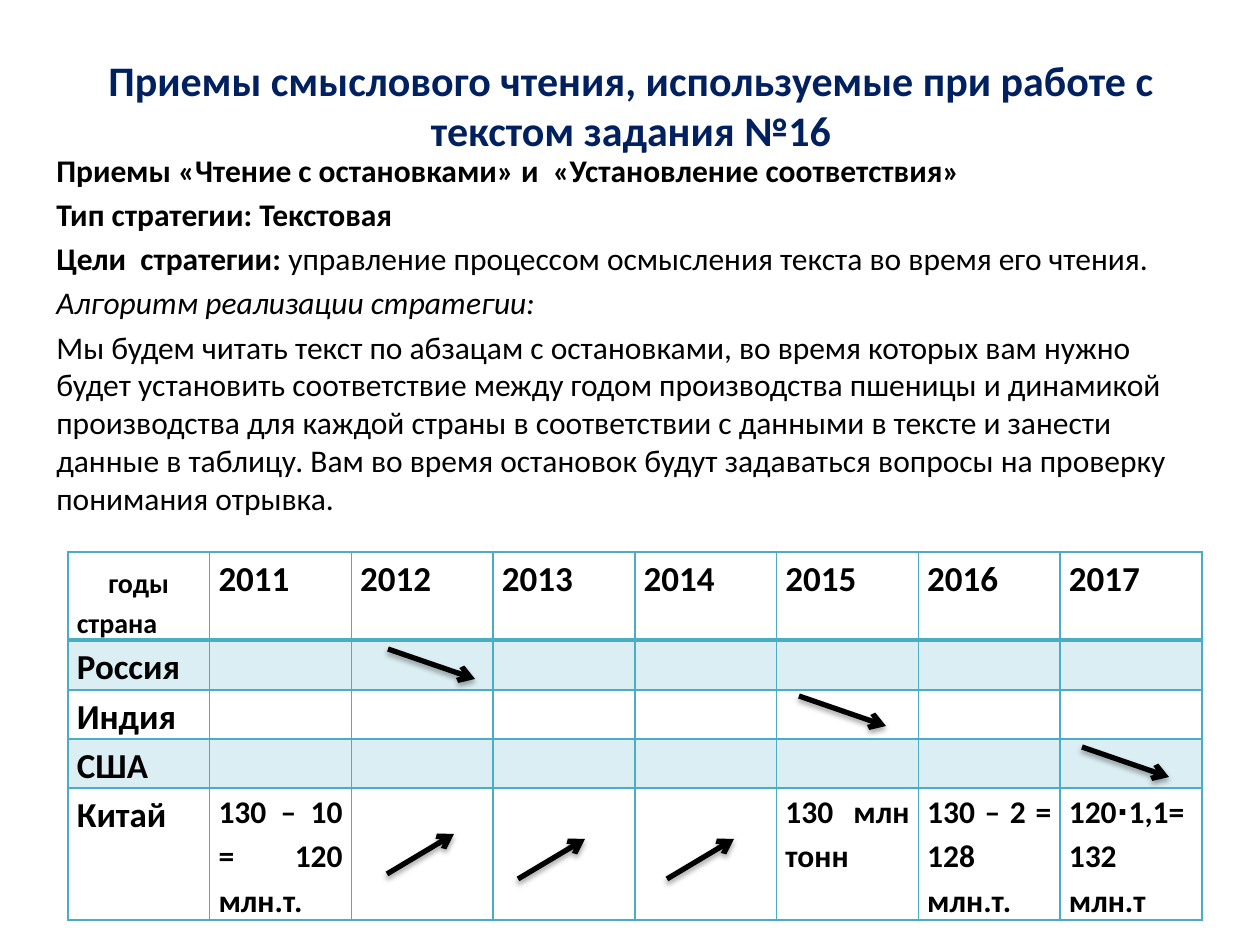
from dataclasses import dataclass

from lxml import etree
from pptx import Presentation
from pptx import util as u
from pptx.dml.color import RGBColor
from pptx.enum import shapes, text
from pptx.oxml import parse_xml
from pptx.oxml.ns import nsdecls, qn

PX = u.Inches(1) / 126


@dataclass(frozen=True)
class Theme:
    font: str = "Calibri"
    navy: str = "002060"
    black: str = "000000"
    teal: str = "4BACC6"
    title: int = 24
    body: int = 18
    label: int = 20
    corner: int = 16


THEME = Theme()

STRATEGY = [
    [("Приемы «Чтение с остановками» и  «Установление соответствия»", "b")],
    [("Тип стратегии: Текстовая", "b")],
    [("Цели  стратегии:", "b"),
     (" управление процессом осмысления текста во время его чтения.", "")],
    [("Алгоритм реализации стратегии:", "i")],
    [("Мы будем читать текст по абзацам с остановками, во время которых вам нужно "
      "будет установить соответствие между годом производства пшеницы и динамикой "
      "производства для каждой страны в соответствии с данными в тексте и занести "
      "данные в таблицу. Вам во время остановок будут задаваться вопросы на проверку "
      "понимания отрывка.", "")],
]

YEARS = [str(year) for year in range(2011, 2018)]
COUNTRIES = ["Россия", "Индия", "США", "Китай"]
CHINA = {
    "2011": "130 – 10 = 120 млн.т.",
    "2015": "130 млн тонн",
    "2016": "130 – 2 = 128 млн.т.",
    "2017": "120∙1,1=132 млн.т",
}
ROW_HEIGHTS = [88, 50, 49, 49, 132]
RISE, FALL = (67, -40), (87, 30)
TRENDS = [
    (319, 322, RISE), (450, 327, RISE), (599, 327, RISE),
    (320, 97, FALL), (731, 144, FALL), (1014, 195, FALL),
]


def px(value):
    return u.Emu(round(value * PX))


def style(font, size, color=THEME.black, bold=False, italic=False):
    font.name = THEME.font
    font.size = u.Pt(size)
    font.color.rgb = RGBColor.from_string(color)
    font.bold = bold
    font.italic = italic


def place_title(slide, box):
    heading = slide.shapes.title
    heading.left, heading.top, heading.width, heading.height = map(px, box)
    frame = heading.text_frame
    frame.text = "Приемы смыслового чтения, используемые при работе с текстом задания №16"
    frame.vertical_anchor = text.MSO_ANCHOR.MIDDLE
    frame.paragraphs[0].alignment = text.PP_ALIGN.CENTER
    style(frame.paragraphs[0].runs[0].font, THEME.title, THEME.navy, bold=True)


def place_strategy(slide, box):
    frame = slide.shapes.add_textbox(*map(px, box)).text_frame
    frame.word_wrap = True
    for index, pieces in enumerate(STRATEGY):
        paragraph = frame.add_paragraph() if index else frame.paragraphs[0]
        if index:
            paragraph.space_before = u.Pt(THEME.body * 0.2)
        for wording, look in pieces:
            run = paragraph.add_run()
            run.text = wording
            style(run.font, THEME.body, bold=look == "b", italic=look == "i")


def write_cell(cell, wording, size):
    cell.margin_left = cell.margin_right = u.Inches(0.07)
    cell.margin_top = cell.margin_bottom = 0
    cell.text_frame.text = wording
    for paragraph in cell.text_frame.paragraphs:
        paragraph.alignment = text.PP_ALIGN.JUSTIFY
        paragraph.line_spacing = 1.15
        style(paragraph.font, size, bold=True)
        for run in paragraph.runs:
            style(run.font, size, bold=True)


def paint_cell(cell, banded, top, bottom):
    properties = cell._tc.get_or_add_tcPr()
    if banded:
        cell.fill.solid()
        cell.fill.fore_color.rgb = RGBColor.from_string(THEME.teal)
        color = properties.find(qn("a:solidFill"))[0]
        etree.SubElement(color, qn("a:alpha"), val="20000")
    else:
        cell.fill.background()
    edges = [("lnL", 1), ("lnR", 1), ("lnT", top), ("lnB", bottom)]
    for position, (edge, width) in enumerate(edges):
        properties.insert(position, parse_xml(
            f'<a:{edge} {nsdecls("a")} w="{u.Pt(width)}"><a:solidFill>'
            f'<a:srgbClr val="{THEME.teal}"/></a:solidFill></a:{edge}>'))


def place_trend(slide, start, step):
    x, y = start
    arrow = slide.shapes.add_connector(
        shapes.MSO_CONNECTOR.STRAIGHT, px(x), px(y), px(x + step[0]), px(y + step[1]))
    arrow.line.width = u.Pt(3)
    arrow.line.color.rgb = RGBColor.from_string(THEME.black)
    etree.SubElement(arrow.line._get_or_add_ln(), qn("a:tailEnd"), type="arrow")
    arrow._element.spPr.append(parse_xml(
        f'<a:effectLst {nsdecls("a")}><a:outerShdw blurRad="{u.Pt(3.1)}" '
        f'dist="{u.Pt(1.8)}" dir="5400000" rotWithShape="0">'
        f'<a:srgbClr val="{THEME.black}"><a:alpha val="35000"/></a:srgbClr>'
        '</a:outerShdw></a:effectLst>'))


def place_harvest(slide, box):
    left, top, width, height = box
    rows = [["годы\nстрана", *YEARS]]
    for country in COUNTRIES:
        amounts = CHINA if country == "Китай" else {}
        rows.append([country, *(amounts.get(year, "") for year in YEARS)])
    table = slide.shapes.add_table(len(rows), len(rows[0]), *map(px, box)).table
    table.first_row = table.horz_banding = False
    for column in table.columns:
        column.width = px(width / len(rows[0]))
    for r, wordings in enumerate(rows):
        table.rows[r].height = px(ROW_HEIGHTS[r])
        for c, wording in enumerate(wordings):
            cell = table.cell(r, c)
            is_amount = r > 0 and c > 0
            size = THEME.body if is_amount else THEME.label
            write_cell(cell, wording, THEME.corner if r == c == 0 else size)
            paint_cell(cell, r in (1, 3), 2 if r == 1 else 1, 2 if r == 0 else 1)
    years_label = table.cell(0, 0).text_frame.paragraphs[0]
    years_label.line_spacing = 1.44
    years_label._p.get_or_add_pPr().set("indent", str(u.Pt(18)))
    for x, y, step in TRENDS:
        place_trend(slide, (left + x, top + y), step)


def main():
    deck = Presentation()
    deck.slide_width, deck.slide_height = px(1260), px(945)
    slide = deck.slides.add_slide(deck.slide_layouts.get_by_name("Title Only"))
    place_title(slide, (64, 26, 1134, 158))
    place_strategy(slide, (44, 145, 1171, 644))
    place_harvest(slide, (68, 552, 1134, sum(ROW_HEIGHTS)))
    deck.save("out.pptx")


if __name__ == "__main__":
    main()
